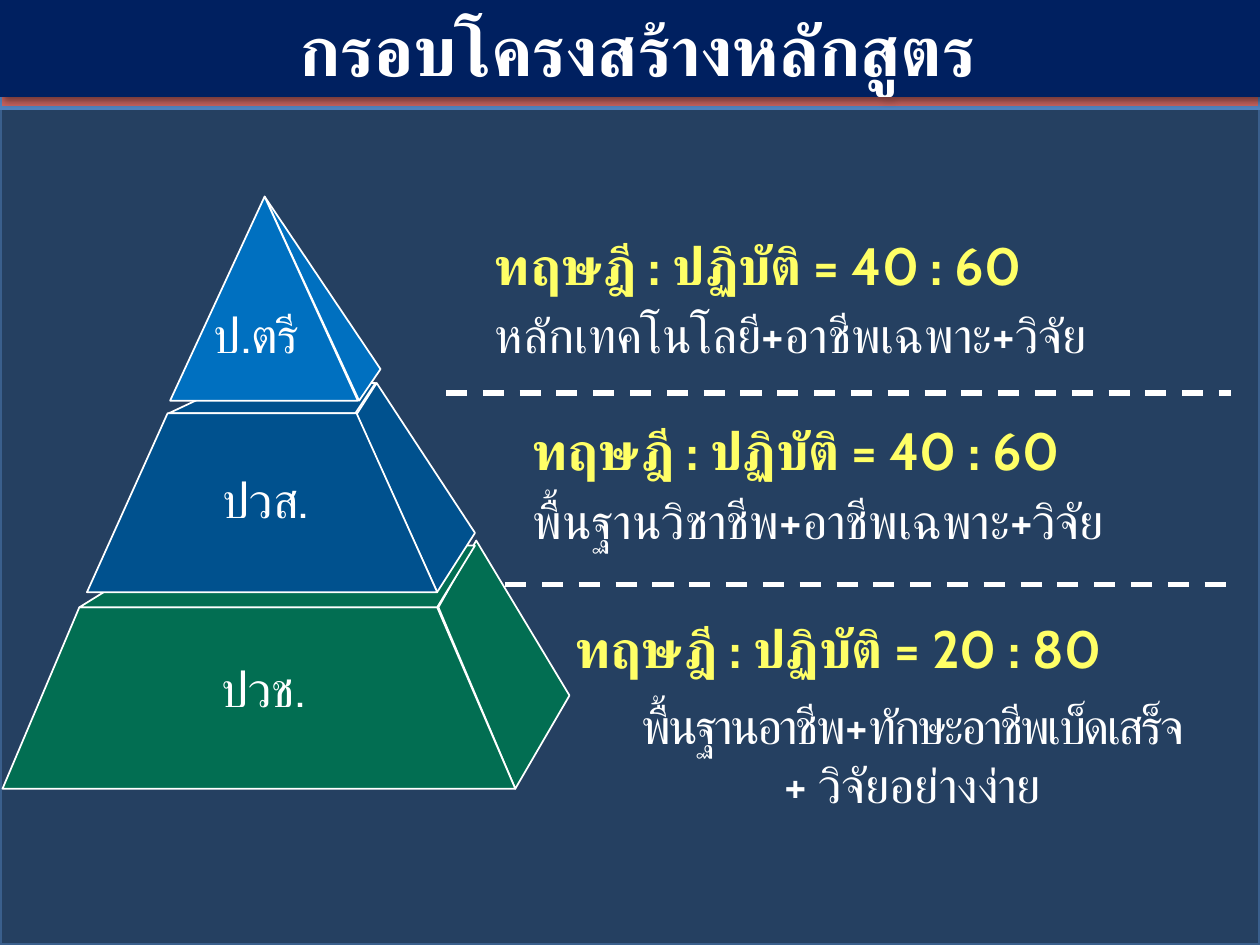
from lxml import etree
from pptx import Presentation
from pptx.dml.color import RGBColor
from pptx.enum.dml import MSO_LINE
from pptx.enum.shapes import MSO_CONNECTOR, MSO_SHAPE
from pptx.enum.text import PP_ALIGN
from pptx.oxml import parse_xml
from pptx.oxml.ns import nsdecls, qn
from pptx.util import Inches, Pt

FONT = "Cabin"
WHITE, YELLOW = "FFFFFF", "FFFF66"
GREEN, NAVY, BLUE = "026E52", "00518E", "0070C0"

deck = Presentation()
deck.slide_width, deck.slide_height = Inches(10), Inches(7.5)
slide = deck.slides.add_slide(deck.slide_layouts[6])
shapes = slide.shapes


def paint(shape, fill, line=None, width=1):
    """Set fill and outline from hex strings and drop the theme shadow."""
    shape.shadow.inherit = False
    shape.fill.solid()
    shape.fill.fore_color.rgb = RGBColor.from_string(fill)
    if line:
        shape.line.color.rgb = RGBColor.from_string(line)
        shape.line.width = Pt(width)
    else:
        shape.line.fill.background()


def write(shape, *lines, size=28, color=WHITE, bold=False, align=PP_ALIGN.LEFT, tight=()):
    """Fill a shape with one paragraph per line; tight gives letter spacing."""
    frame = shape.text_frame
    frame.word_wrap = True
    for i, line in enumerate(lines):
        para = frame.paragraphs[0] if i == 0 else frame.add_paragraph()
        para.alignment = align
        run = para.add_run()
        run.text = line
        font = run.font
        font.name, font.size, font.bold = FONT, Pt(size), bold
        font.color.rgb = RGBColor.from_string(color)
        props = run._r.get_or_add_rPr()
        etree.SubElement(props, qn("a:cs")).set("typeface", FONT)
        if i < len(tight):
            props.set("spc", str(int(tight[i] * 100)))


# Background and accent band
for high, fill, line, width in [(7.5, "254061", "3A5F8C", 2), (0.86, "C6625F", "4F81BD", 2.25)]:
    band = shapes.add_shape(MSO_SHAPE.RECTANGLE, 0, 0, Inches(10), Inches(high))
    paint(band, fill, line, width)

# Pyramid faces, from the bottom tier up
faces = [
    (GREEN, [(3.48, 4.82), (4.09, 6.26), (4.52, 5.52), (3.78, 4.29)]),
    (GREEN, [(0.02, 6.26), (4.09, 6.26), (3.47, 4.82), (0.63, 4.82)]),
    (GREEN, [(0.63, 4.82), (3.47, 4.82), (3.77, 4.33), (1.42, 4.33)]),
    (NAVY, [(3.47, 4.7), (3.77, 4.23), (2.99, 3.04), (2.83, 3.29)]),
    (NAVY, [(1.34, 3.28), (2.82, 3.28), (2.98, 3.04), (1.85, 3.04)]),
    (NAVY, [(0.69, 4.7), (3.47, 4.7), (2.83, 3.28), (1.33, 3.28)]),
    (BLUE, [(2.85, 3.18), (3.02, 2.93), (2.1, 1.56)]),
    (BLUE, [(1.35, 3.18), (2.84, 3.18), (2.1, 1.56)]),
]
for fill, points in faces:
    dots = [(round(x * 100), round(y * 100)) for x, y in points]
    pen = shapes.build_freeform(*dots[0], scale=Inches(0.01))
    pen.add_line_segments(dots[1:], close=True)
    paint(pen.convert_to_shape(), fill, WHITE)

# Tier labels
for label, x, y in [("ปวช.", 1.66, 5.18), ("ปวส.", 1.67, 3.68), ("ป.ตรี", 1.6, 2.37)]:
    box = shapes.add_textbox(Inches(x), Inches(y), Inches(1), Inches(0.57))
    write(box, label)

# Title bar with a soft shadow
title = shapes.add_shape(MSO_SHAPE.RECTANGLE, 0, 0, Inches(10), Inches(0.77))
paint(title, "002060")
write(title, " กรอบโครงสร้างหลักสูตร", size=40, bold=True, align=PP_ALIGN.CENTER)
glow = title._element.spPr.find(qn("a:effectLst"))
glow.append(parse_xml(
    f'<a:outerShdw {nsdecls("a")} blurRad="{Pt(4)}" dist="{Pt(3)}" dir="2700000">'
    '<a:srgbClr val="000000"><a:alpha val="40000"/></a:srgbClr></a:outerShdw>'))

# Theory to practice ratios
for x, y, ratio in [(4.47, 4.84, "20 : 80"), (4.13, 3.27, "40 : 60"), (3.83, 1.8, "40 : 60")]:
    box = shapes.add_textbox(Inches(x), Inches(y), Inches(5), Inches(0.61))
    write(box, f"ทฤษฎี : ปฏิบัติ = {ratio}", size=30, color=YELLOW, bold=True)

# Dashed dividers
for left, right, y in [(3.54, 9.77, 3.12), (4.01, 9.84, 4.64)]:
    rule = shapes.add_connector(
        MSO_CONNECTOR.STRAIGHT, Inches(left), Inches(y), Inches(right), Inches(y))
    rule.line.color.rgb = RGBColor.from_string(WHITE)
    rule.line.width = Pt(3)
    rule.line.dash_style = MSO_LINE.DASH
    etree.SubElement(rule._element.spPr, qn("a:effectLst"))

# Content of each tier
base = shapes.add_textbox(Inches(4.49), Inches(5.47), Inches(5.51), Inches(1.04))
write(base, "พื้นฐานอาชีพ+ทักษะอาชีพเบ็ดเสร็จ", "+ วิจัยอย่างง่าย",
      align=PP_ALIGN.CENTER, tight=(-1.5, 0))
for x, y, wide, text in [
    (4.13, 3.84, 5.7, "พื้นฐานวิชาชีพ+อาชีพเฉพาะ+วิจัย"),
    (3.83, 2.37, 5.86, "หลักเทคโนโลยี+อาชีพเฉพาะ+วิจัย"),
]:
    box = shapes.add_textbox(Inches(x), Inches(y), Inches(wide), Inches(0.57))
    write(box, text)

deck.save("out.pptx")
